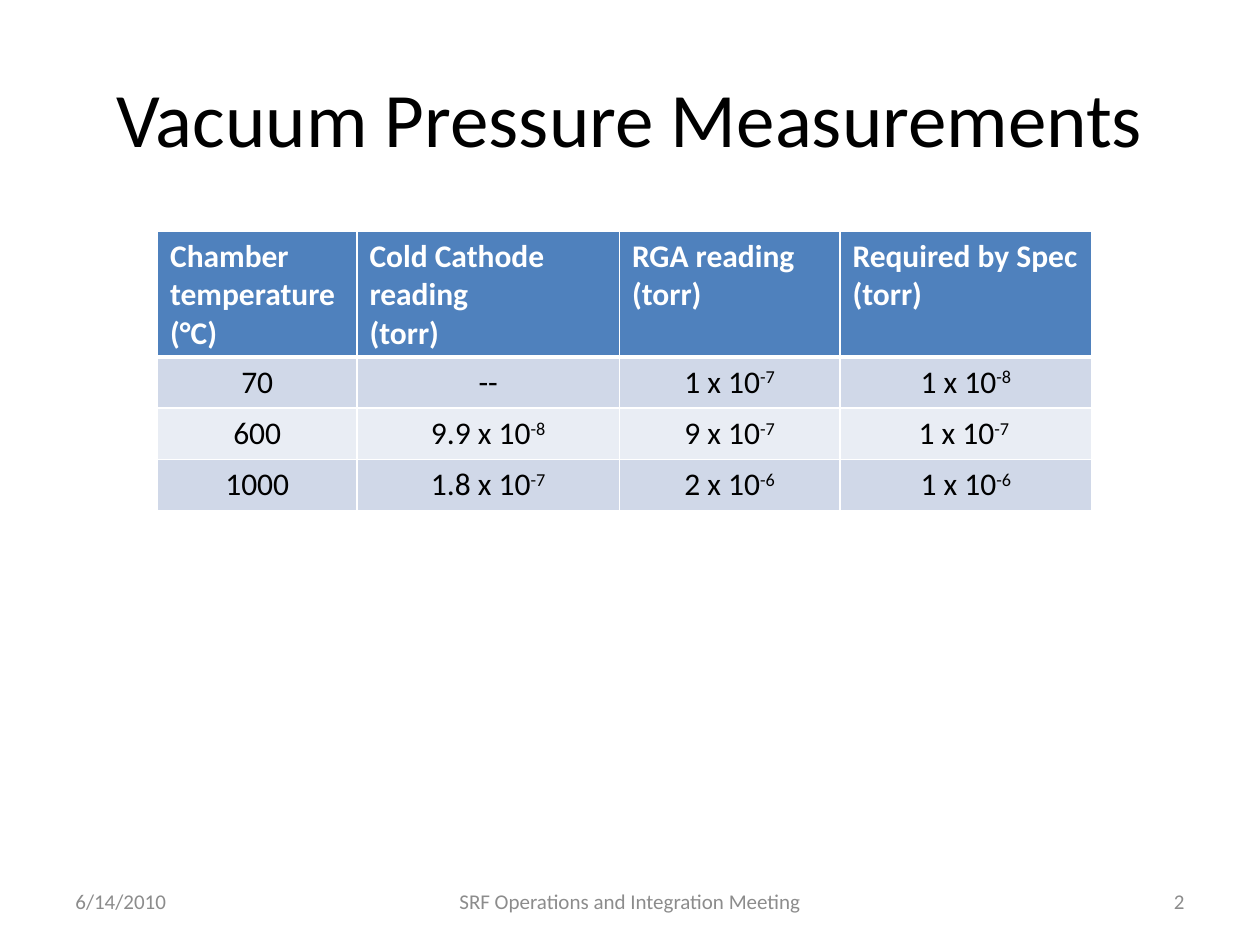
import pptx
import pptx.util
import pptx.dml.color
import pptx.enum.text
import pptx.oxml
import pptx.oxml.ns

RGB = pptx.dml.color.RGBColor
BLACK = RGB(0x00, 0x00, 0x00)
WHITE = RGB(0xFF, 0xFF, 0xFF)
GREY = RGB(0x8C, 0x8C, 0x8C)
BLUE = RGB(0x4F, 0x81, 0xBD)
BANDS = [RGB(0xD0, 0xD8, 0xE8), RGB(0xE9, 0xED, 0xF4)]
ALIGN = pptx.enum.text.PP_ALIGN
MIDDLE = pptx.enum.text.MSO_ANCHOR.MIDDLE

deck = pptx.Presentation()
deck.slide_width = pptx.util.Inches(10)
deck.slide_height = pptx.util.Inches(7.5)
slide = deck.slides.add_slide(deck.slide_layouts[6])
unit = deck.slide_width / 120


def span(*units):
    return [round(n * unit) for n in units]


def write(para, text, align, size, color, bold=False):
    para.alignment = align
    for part, words in enumerate(text.split("^")):
        run = para.add_run()
        run.text = words
        look = {"name": "Calibri", "size": pptx.util.Pt(size), "bold": bold}
        for key, value in look.items():
            setattr(run.font, key, value)
        run.font.color.rgb = color
        if part:
            run.font._element.set("baseline", "30000")


labels = [
    ("Vacuum Pressure Measurements", (6, 3.6, 108, 15), ALIGN.CENTER, 44, BLACK),
    ("6/14/2010", (6, 83.4, 28, 4.8), ALIGN.LEFT, 12, GREY),
    ("SRF Operations and Integration Meeting", (41, 83.4, 38, 4.8), ALIGN.CENTER, 12, GREY),
    ("2", (86, 83.4, 28, 4.8), ALIGN.RIGHT, 12, GREY),
]
for text, place, align, size, color in labels:
    frame = slide.shapes.add_textbox(*span(*place)).text_frame
    for key, value in {"word_wrap": True, "vertical_anchor": MIDDLE}.items():
        setattr(frame, key, value)
    write(frame.paragraphs[0], text, align, size, color)

rows = [
    ["Chamber temperature (°C)", "Cold Cathode reading\n(torr)",
     "RGA reading (torr)", "Required by Spec (torr)"],
    ["70", "--", "1 x 10^-7", "1 x 10^-8"],
    ["600", "9.9 x 10^-8", "9 x 10^-7", "1 x 10^-7 "],
    ["1000", "1.8 x 10^-7", "2 x 10^-6", "1 x 10^-6"],
]
widths = [19, 25, 21, 24]
heights = [12] + [4.87] * 3
place = span(15, 22, sum(widths), sum(heights))
table = slide.shapes.add_table(len(rows), len(widths), *place).table
for col, width in zip(table.columns, span(*widths)):
    col.width = width
for row, height in zip(table.rows, span(*heights)):
    row.height = height

for r, row in enumerate(rows):
    head = r == 0
    for c, text in enumerate(row):
        cell = table.cell(r, c)
        cell.fill.solid()
        cell.fill.fore_color.rgb = BLUE if head else BANDS[(r - 1) % 2]
        frame = cell.text_frame
        for n, line in enumerate(text.split("\n")):
            para = frame.add_paragraph() if n else frame.paragraphs[0]
            write(para, line, ALIGN.LEFT if head else ALIGN.CENTER, 18,
                  WHITE if head else BLACK, head)
        thick = {"L": 1, "R": 1, "T": 3 if r == 1 else 1, "B": 3 if head else 1}
        for n, (side, points) in enumerate(thick.items()):
            edge = pptx.oxml.parse_xml(
                f'<a:ln{side} {pptx.oxml.ns.nsdecls("a")} w="{pptx.util.Pt(points)}">'
                f'<a:solidFill><a:srgbClr val="{WHITE}"/></a:solidFill></a:ln{side}>')
            cell._tc.get_or_add_tcPr().insert(n, edge)

deck.save("out.pptx")
